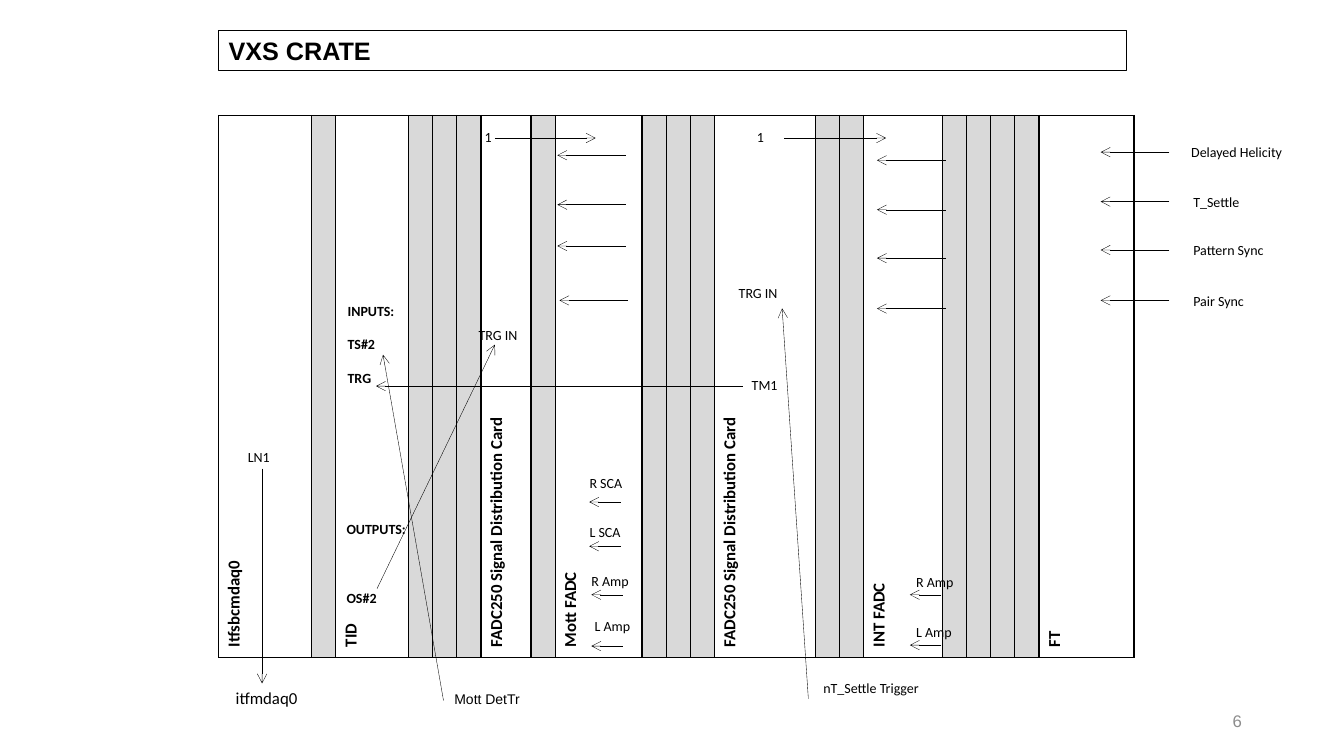
from lxml import etree
from pptx import Presentation
from pptx import util as u
from pptx.dml import color
from pptx.enum import shapes, text
from pptx.oxml import ns

BLACK, WHITE, GREY, MUTED = "000000", "FFFFFF", "D9D9D9", "8C8C8C"
SPACER_WIDTH = 17.2
MODULES = [
    ("Itfsbcmdaq0", 66.4, 1),
    ("TID", 52.1, 3),
    ("FADC250 Signal Distribution Card", 35.7, 1),
    ("Mott FADC", 62.1, 3),
    ("FADC250 Signal Distribution Card", 72.1, 2),
    ("INT FADC", 56.4, 4),
    ("FT", 67.9, 0),
]
HELICITY_SIGNALS = [
    ("Delayed Helicity", 843.8, 108.7),
    ("T_Settle", 845.3, 144),
    ("Pattern Sync", 845.3, 178.6),
    ("Pair Sync", 845.3, 214.6),
]
MOTT_INPUTS = [(447.1, 110.9), (447.1, 146.2), (447.1, 175.7), (448.6, 214.6)]
AMPLIFIERS = [
    ("R SCA", 414, 335.5, 443.5, 358.6),
    ("L SCA", 414, 370.1, 443.5, 390.2),
    ("R Amp", 415.4, 405.4, 445, 424.8),
    ("L Amp", 417.6, 437.8, 445, 461.5),
    ("R Amp", 647.3, 406.1, 672.5, 424.8),
    ("L Amp", 647.3, 442.1, 672.5, 460.8),
]
ROUTES = [
    (187.2, 334.8, 187.2, 488.2),
    (530.6, 275.8, 268.6, 275.8),
    (560.2, 98.6, 632.9, 98.6),
    (353.5, 98.6, 425.5, 98.6),
    (316.8, 500.4, 273.6, 253.4),
    (577.4, 499, 558.7, 220.3),
    (269.3, 420.5, 353.5, 246.2),
]
PORT_LABELS = [
    ("1", 533.5, 88.6, 25.2),
    ("1", 339.1, 88.6, 25.2),
    ("LN1", 169.9, 316.8, 36),
    ("TM1", 529.9, 265.7, 47.5),
    ("TRG IN", 520.6, 199.4, 47.5),
    ("TRG IN", 334.8, 229.7, 47.5),
    ("nT_Settle Trigger", 581, 481.7, 97.2),
]


def rgb(value):
    return color.RGBColor.from_string(value)


def write(tf, content, size=10, font="Calibri", fill=BLACK, bold=False,
          align=text.PP_ALIGN.LEFT, gap=0):
    for i, line in enumerate(content.split("\n")):
        p = tf.add_paragraph() if i else tf.paragraphs[0]
        p.alignment = align
        p.space_before = u.Pt(gap if i else 0)
        r = p.add_run()
        r.text = line
        r.font.size, r.font.name, r.font.bold = u.Pt(size), font, bold
        r.font.color.rgb = rgb(fill)


class CrateSlide:
    line_color = BLACK
    line_width = 0.25
    border_width = 1

    def __init__(self, prs):
        self.s = prs.slides.add_slide(prs.slide_layouts[6])

    def box(self, content, x, y, w, h, **style):
        sp = self.s.shapes.add_shape(shapes.MSO_SHAPE.RECTANGLE, *map(u.Pt, (x, y, w, h)))
        sp.shadow.inherit = False
        sp.fill.background()
        sp.line.color.rgb = rgb(self.line_color)
        sp.line.width = u.Pt(self.line_width)
        sp.text_frame.vertical_anchor = text.MSO_ANCHOR.MIDDLE
        write(sp.text_frame, content, **style)

    def label(self, content, x, y, w=82.8, h=19.4, anchor=text.MSO_ANCHOR.TOP, **style):
        sp = self.s.shapes.add_textbox(*map(u.Pt, (x, y, w, h)))
        sp.text_frame.word_wrap = True
        sp.text_frame.vertical_anchor = anchor
        write(sp.text_frame, content, **style)

    def arrow(self, x1, y1, x2, y2):
        c = self.s.shapes.add_connector(
            shapes.MSO_CONNECTOR.STRAIGHT, *map(u.Pt, (x1, y1, x2, y2)))
        c.line.color.rgb = rgb(self.line_color)
        c.line.width = u.Pt(self.line_width)
        etree.SubElement(c.line._get_or_add_ln(), ns.qn("a:tailEnd"), type="arrow")
        etree.SubElement(c._element.spPr, ns.qn("a:effectLst"))

    def cell(self, cell, content, fill):
        tcPr = cell._tc.get_or_add_tcPr()
        tcPr.set("vert", "vert270")
        for side in ("lnL", "lnR", "lnT", "lnB"):
            ln = etree.SubElement(tcPr, ns.qn("a:" + side), w=str(u.Pt(self.border_width)))
            solid = etree.SubElement(ln, ns.qn("a:solidFill"))
            etree.SubElement(solid, ns.qn("a:srgbClr"), val=self.line_color)
        cell.fill.solid()
        cell.fill.fore_color.rgb = rgb(fill)
        if content:
            write(cell.text_frame, content, size=12, bold=True)

    def crate(self, modules, x, y, h):
        slots = []
        for name, width, spacers in modules:
            slots.append((name, width, WHITE))
            slots += [("", SPACER_WIDTH, GREY)] * spacers
        total = sum(width for _, width, _ in slots)
        frame = self.s.shapes.add_table(1, len(slots), *map(u.Pt, (x, y, total, h)))
        tbl = frame.table
        tbl.first_row = tbl.horz_banding = False
        for i, (name, width, fill) in enumerate(slots):
            tbl.columns[i].width = u.Pt(width)
            self.cell(tbl.cell(0, i), name, fill)


def main():
    prs = Presentation()
    prs.slide_width, prs.slide_height = u.Pt(960), u.Pt(540)
    slide = CrateSlide(prs)
    slide.box("VXS CRATE", 156.2, 21.6, 648, 28.4, size=18, font="Arial", bold=True)
    slide.crate(MODULES, 156.2, 82.5, 387)

    for route in ROUTES:
        slide.arrow(*route)
    for name, x, y, w in PORT_LABELS:
        slide.label(name, x, y, w)
    for name, x, y in HELICITY_SIGNALS:
        slide.arrow(835.2, y, 786.2, y)
        slide.arrow(675.4, y + 5.8, 626.4, y + 5.8)
        slide.label(name, x, y - 9.4)
    for x, y in MOTT_INPUTS:
        slide.arrow(x, y, x - 49, y)
    for name, x, y, tip_x, tip_y in AMPLIFIERS:
        slide.label(name, x, y)
        slide.arrow(tip_x, tip_y, tip_x - 22.6, tip_y)

    slide.label("INPUTS:\nTS#2\nTRG", 241.2, 212.4, 54, 67.7, bold=True, gap=12)
    slide.label("OUTPUTS:\nOS#2", 240.5, 368.6, 60.5, 67.7, bold=True, gap=36.6)
    slide.label("itfmdaq0", 161.3, 487.4, 67, 21.6, size=12)
    slide.label("Mott DetTr", 317.5, 489.6, 69.8, font="Arial")
    slide.label("6", 678.2, 500.4, 216, 28.8, anchor=text.MSO_ANCHOR.MIDDLE,
                size=12, font="Arial", fill=MUTED, align=text.PP_ALIGN.RIGHT)
    prs.save("out.pptx")


if __name__ == "__main__":
    main()
